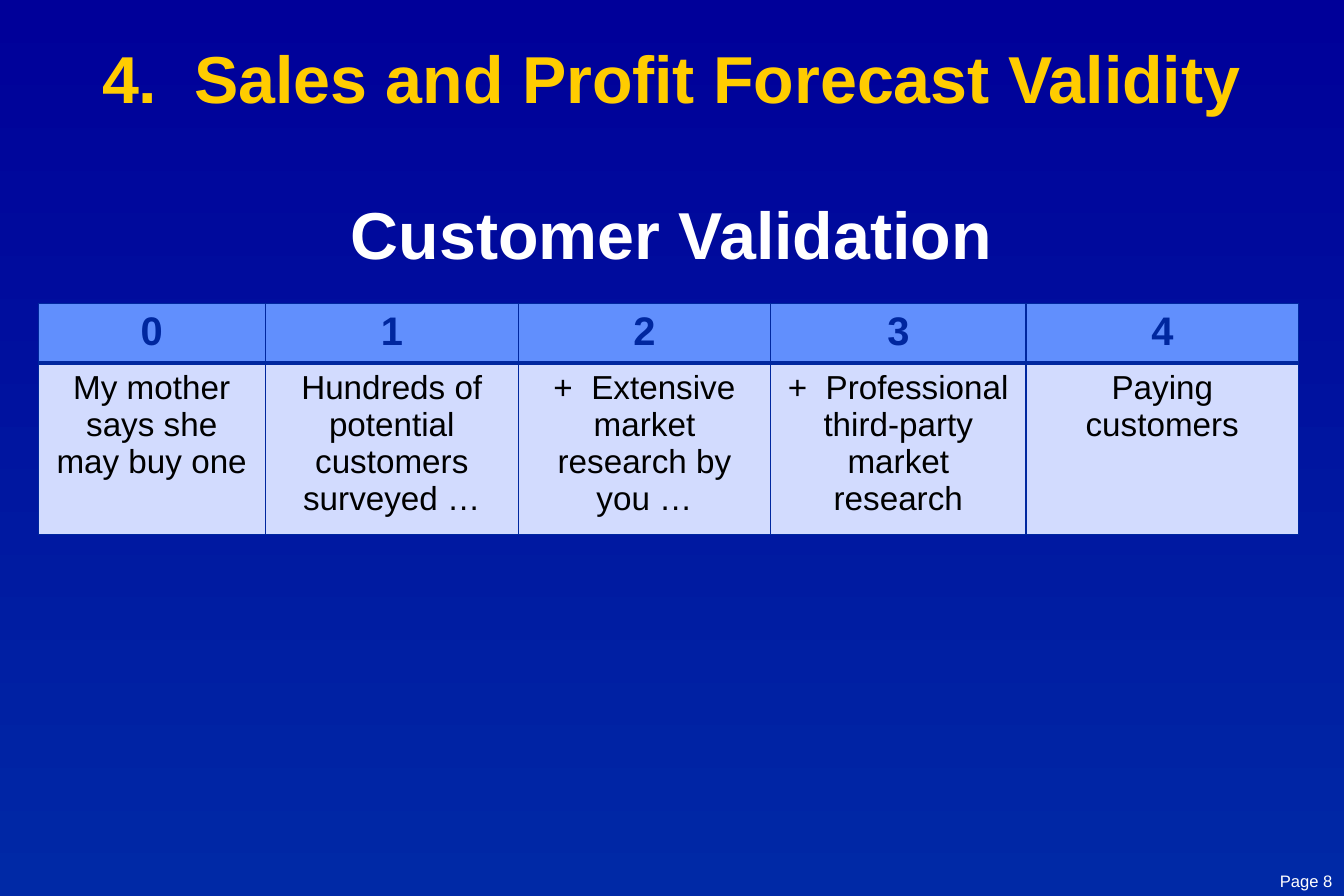
"""Build the customer validation slide."""
from dataclasses import dataclass

from lxml import etree
from pptx import Presentation
from pptx import util as u
from pptx.dml.color import RGBColor
from pptx.enum import text
from pptx.oxml import ns

PX = 9144
COLUMNS = [
    (190, "0", "My mother says she may buy one"),
    (212, "1", "Hundreds of potential customers surveyed …"),
    (211, "2", "+  Extensive market research by you …"),
    (214, "3", "+  Professional third-party market research"),
    (228, "4", "Paying customers"),
]


@dataclass(frozen=True)
class Theme:
    font: str = "Arial"
    sky_top: str = "000099"
    sky_bottom: str = "0029A6"
    gold: str = "FFCC00"
    white: str = "FFFFFF"
    black: str = "000000"
    navy: str = "00279F"
    header: str = "618FFD"
    body: str = "D2DBFE"
    title_pt: int = 40
    score_pt: int = 24
    body_pt: int = 20
    page_pt: int = 10


THEME = Theme()


def px(n):
    return u.Emu(n * PX)


def rgb(color):
    return RGBColor.from_string(color)


def format_paragraph(p, size, color, bold=False, align=text.PP_ALIGN.CENTER):
    p.alignment = align
    for r in p.runs:
        r.font.name = THEME.font
        r.font.size = u.Pt(size)
        r.font.bold = bold
        r.font.color.rgb = rgb(color)


def paint_background(s):
    fill = s.background.fill
    fill.gradient()
    fill.gradient_angle = 270
    for stop, color in zip(fill.gradient_stops, (THEME.sky_top, THEME.sky_bottom)):
        stop.color.rgb = rgb(color)


def add_text_box(s, left, top, width, height, content):
    tf = s.shapes.add_textbox(px(left), px(top), px(width), px(height)).text_frame
    tf.word_wrap = True
    tf.text = content
    return tf


def add_title(s):
    tf = add_text_box(s, 56, 30, 1012, 198,
                      "4.  Sales and Profit Forecast Validity\nCustomer Validation")
    tf.margin_left = tf.margin_top = tf.margin_right = tf.margin_bottom = 0
    tf.vertical_anchor = text.MSO_ANCHOR.BOTTOM
    for p, color in zip(tf.paragraphs, (THEME.gold, THEME.white)):
        format_paragraph(p, THEME.title_pt, color, bold=True)
    tf.paragraphs[1].space_before = u.Pt(46)


def add_page_number(s):
    tf = add_text_box(s, 1007, 724, 118, 26, "Page 8")
    format_paragraph(tf.paragraphs[0], THEME.page_pt, THEME.white,
                     align=text.PP_ALIGN.RIGHT)


def set_borders(cell, widths):
    tc_pr = cell._tc.get_or_add_tcPr()
    for i, (side, width) in enumerate(widths.items()):
        ln = etree.Element(ns.qn(f"a:{side}"), w=str(u.Pt(width)))
        fill = etree.SubElement(ln, ns.qn("a:solidFill"))
        etree.SubElement(fill, ns.qn("a:srgbClr"), val=THEME.navy)
        tc_pr.insert(i, ln)


def fill_cell(cell, content, size, color, fill, bold, widths):
    cell.text = content
    format_paragraph(cell.text_frame.paragraphs[0], size, color, bold)
    cell.fill.solid()
    cell.fill.fore_color.rgb = rgb(fill)
    set_borders(cell, widths)


def add_score_table(s):
    width = sum(column[0] for column in COLUMNS)
    table = s.shapes.add_table(2, len(COLUMNS), px(32), px(254),
                               px(width), px(181)).table
    for row, height in zip(table.rows, (47, 134)):
        row.height = px(height)
    for i, (column_width, score, meaning) in enumerate(COLUMNS):
        table.columns[i].width = px(column_width)
        fill_cell(table.cell(0, i), score, THEME.score_pt, THEME.navy, THEME.header,
                  True, {"lnL": 1, "lnR": 1, "lnT": 1, "lnB": 3})
        fill_cell(table.cell(1, i), meaning, THEME.body_pt, THEME.black, THEME.body,
                  False, {"lnL": 1, "lnR": 1, "lnT": 3, "lnB": 1})


def main():
    prs = Presentation()
    prs.slide_width, prs.slide_height = px(1125), px(750)
    s = prs.slides.add_slide(prs.slide_layouts[6])
    paint_background(s)
    add_title(s)
    add_page_number(s)
    add_score_table(s)
    prs.save("out.pptx")


if __name__ == "__main__":
    main()
